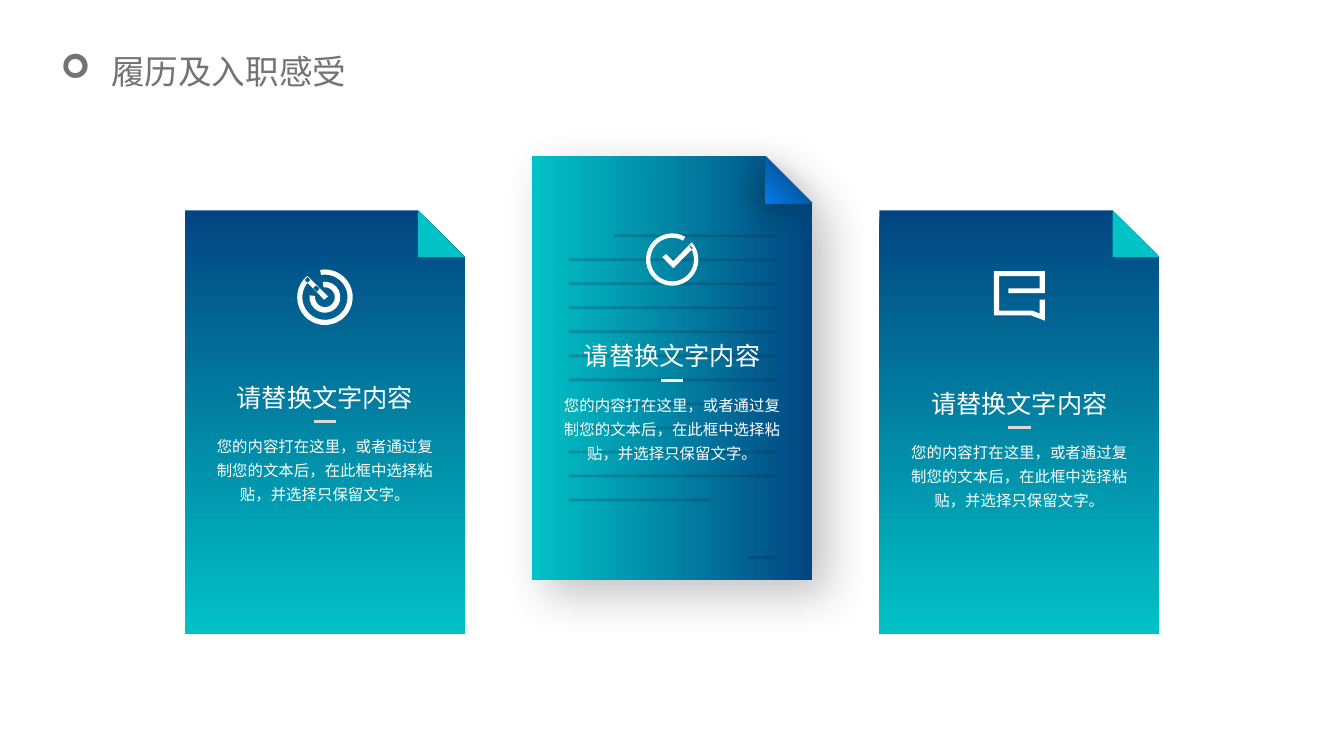
import math
from dataclasses import dataclass

import pptx
import pptx.dml.color
import pptx.enum.shapes
import pptx.enum.text
import pptx.oxml
import pptx.oxml.ns
import pptx.util
from lxml import etree

Cm = pptx.util.Cm
Pt = pptx.util.Pt
RGBColor = pptx.dml.color.RGBColor
qn = pptx.oxml.ns.qn
MSO_SHAPE = pptx.enum.shapes.MSO_SHAPE
PP_ALIGN = pptx.enum.text.PP_ALIGN
MSO_ANCHOR = pptx.enum.text.MSO_ANCHOR

NAVY = RGBColor(0x02, 0x45, 0x81)
TEAL = RGBColor(0x01, 0xC2, 0xC6)
BLUE = RGBColor(0x04, 0x7C, 0xEA)
INK = RGBColor(0x01, 0x2E, 0x56)
WHITE = RGBColor(0xFF, 0xFF, 0xFF)
PALE = RGBColor(0xD9, 0xD9, 0xD9)
GREY = RGBColor(0x75, 0x72, 0x72)

FONT = "Noto Sans CJK SC"
HEADING = "请替换文字内容"
BODY = "您的内容打在这里，或者通过复制您的文本后，在此框中选择粘贴，并选择只保留文字。"
CARD_W, CARD_H, FOLD = 7.06, 10.67, 1.18
RULE_LEFT, RULE_RIGHT = 14.33, 19.56
RULE_TOP, RULE_BOTTOM, RULE_COUNT = 5.94, 12.6, 12
ARC_PARTS = 4


@dataclass
class Contour:
    points: list[tuple[float, float]]
    curved: bool = False


def arc(radius: float, start: float, end: float) -> list[tuple[float, float]]:
    step = math.radians(end - start) / ARC_PARTS
    pull = 4 / 3 * math.tan(step / 4)
    points = [(radius * math.cos(math.radians(start)), radius * math.sin(math.radians(start)))]
    for i in range(ARC_PARTS):
        a = math.radians(start) + i * step
        b = a + step
        points += [
            (radius * (math.cos(a) - pull * math.sin(a)), radius * (math.sin(a) + pull * math.cos(a))),
            (radius * (math.cos(b) + pull * math.sin(b)), radius * (math.sin(b) - pull * math.cos(b))),
            (radius * math.cos(b), radius * math.sin(b)),
        ]
    return points


def ring(outer: float, inner: float, start: float, end: float) -> Contour:
    return Contour(arc(outer, start, end) + arc(inner, end, start), curved=True)


TARGET = [
    ring(0.7, 0.57, 260, 590),
    ring(0.39, 0.25, 262, 547),
    Contour([(0.08, -0.02), (-0.02, 0.06), (-0.51, -0.43), (-0.43, -0.53)]),
    Contour([(-0.3, -0.23), (-0.23, -0.3), (-0.13, -0.23), (-0.2, -0.13)]),
]
CHECK = [
    ring(0.66, 0.55, 319, 660),
    Contour([(-0.05, 0.14), (-0.25, -0.06), (-0.15, -0.14), (0.03, 0.04),
             (0.43, -0.37), (0.53, -0.29), (0.03, 0.22)]),
]
CHAT = [
    Contour([(0.51, 0.08), (0.64, 0.08), (0.64, 0.61), (0.3, 0.48), (-0.64, 0.48), (-0.64, -0.64),
             (0.64, -0.64), (0.64, -0.08), (-0.28, -0.08), (-0.28, -0.2), (0.51, -0.2),
             (0.51, -0.51), (-0.51, -0.51), (-0.51, 0.36), (0.33, 0.36), (0.51, 0.43)]),
]


@dataclass
class Card:
    center: float
    top: float
    heading_top: float
    icon_y: float
    icon: list[Contour]
    dash: RGBColor
    raised: bool = False


CARDS = [
    Card(8.19, 5.3, 9.32, 7.49, TARGET, PALE),
    Card(25.69, 5.3, 9.47, 7.47, CHAT, PALE),
    Card(16.94, 3.94, 8.27, 6.54, CHECK, WHITE, raised=True),
]


def add_alpha(clr, percent: int) -> None:
    etree.SubElement(clr, qn("a:alpha")).set("val", str(percent * 1000))


def fill_gradient(sp, first: RGBColor, last: RGBColor, angle: int, start: float = 0) -> None:
    sp.fill.gradient()
    sp.fill.gradient_angle = angle
    for stop, color, position in zip(sp.fill.gradient_stops, (first, last), (start, 1)):
        stop.color.rgb = color
        stop.position = position


def add_shadow(sp, alpha: int, blur: int, dist: int, angle: int) -> None:
    effects = sp._element.spPr.find(qn("a:effectLst"))
    shadow = etree.SubElement(effects, qn("a:outerShdw"), blurRad=str(Pt(blur)),
                              dist=str(Pt(dist)), dir=str(angle * 60000),
                              algn="ctr", rotWithShape="0")
    add_alpha(etree.SubElement(shadow, qn("a:srgbClr"), val="000000"), alpha)


def add_preset(shapes, kind, x: float, y: float, w: float, h: float):
    sp = shapes.add_shape(kind, Cm(x), Cm(y), Cm(w), Cm(h))
    sp.shadow.inherit = False
    sp.line.fill.background()
    return sp


def add_line(shapes, x1: float, x2: float, y: float, color: RGBColor, alpha: int = 100) -> None:
    line = shapes.add_connector(pptx.enum.shapes.MSO_CONNECTOR.STRAIGHT,
                                Cm(x1), Cm(y), Cm(x2), Cm(y))
    line.line.color.rgb = color
    line.line.width = Pt(2)
    etree.SubElement(line._element.spPr, qn("a:effectLst"))
    if alpha < 100:
        add_alpha(line._element.spPr.find(".//" + qn("a:srgbClr")), alpha)


def add_text(s, text: str, x: float, y: float, w: float, h: float, size: int,
             color: RGBColor, anchor=MSO_ANCHOR.MIDDLE):
    tf = s.shapes.add_textbox(Cm(x), Cm(y), Cm(w), Cm(h)).text_frame
    tf.word_wrap = True
    tf.auto_size = pptx.enum.text.MSO_AUTO_SIZE.SHAPE_TO_FIT_TEXT
    tf.vertical_anchor = anchor
    tf.text = text
    r = tf.paragraphs[0].runs[0]
    r.font.size = Pt(size)
    r.font.name = FONT
    r.font.color.rgb = color
    etree.SubElement(r._r.get_or_add_rPr(), qn("a:ea"), typeface=FONT)
    return tf


def add_centered(s, text: str, center: float, y: float, w: float, h: float, size: int, anchor) -> None:
    p = add_text(s, text, center - w / 2, y, w, h, size, WHITE, anchor).paragraphs[0]
    p.alignment = PP_ALIGN.CENTER
    p.line_spacing = 1.3


def add_sheet(s, card: Card) -> None:
    shapes = s.shapes.add_group_shape().shapes
    left = card.center - CARD_W / 2
    page = add_preset(shapes, MSO_SHAPE.SNIP_1_RECTANGLE, left, card.top, CARD_W, CARD_H)
    page.adjustments[0] = FOLD / CARD_W
    fill_gradient(page, NAVY, TEAL, 180 if card.raised else 270)
    fold = add_preset(shapes, MSO_SHAPE.RIGHT_TRIANGLE, left + CARD_W - FOLD, card.top, FOLD, FOLD)
    if not card.raised:
        fold.fill.solid()
        fold.fill.fore_color.rgb = TEAL
        return
    fill_gradient(fold, NAVY, BLUE, 225, 0.17)
    add_shadow(page, 23, 33, 15, 45)
    add_shadow(fold, 30, 22, 8, 135)
    gap = (RULE_BOTTOM - RULE_TOP) / (RULE_COUNT - 1)
    for i in range(RULE_COUNT):
        x1 = 15.49 if i == 0 else RULE_LEFT
        x2 = 17.88 if i == RULE_COUNT - 1 else RULE_RIGHT
        add_line(shapes, x1, x2, RULE_TOP + i * gap, INK, 25)
    add_line(shapes, 18.85, RULE_RIGHT, 14.05, INK, 25)


def bend_arcs(sp, contours: list[Contour]) -> None:
    span = 3 * ARC_PARTS
    moves = list(sp._element.iter(qn("a:moveTo")))
    for move, contour in zip(moves, contours):
        if not contour.curved:
            continue
        lines = list(move.itersiblings())[:len(contour.points) - 1]
        for i in (*range(0, span, 3), *range(span + 1, 2 * span + 1, 3)):
            curve = etree.Element(qn("a:cubicBezTo"))
            lines[i].addprevious(curve)
            for line in lines[i:i + 3]:
                curve.append(line[0])
                line.getparent().remove(line)


def add_icon(s, card: Card) -> None:
    builder = None
    for contour in card.icon:
        points = [(Cm(card.center + x), Cm(card.icon_y + y)) for x, y in contour.points]
        if builder is None:
            builder = s.shapes.build_freeform(*points[0])
        else:
            builder.move_to(*points[0])
        builder.add_line_segments(points[1:], close=True)
    sp = builder.convert_to_shape()
    bend_arcs(sp, card.icon)
    sp.shadow.inherit = False
    sp.fill.solid()
    sp.fill.fore_color.rgb = WHITE
    sp.line.fill.background()


def add_title(s) -> None:
    tf = add_text(s, "履历及入职感受", 1.53, 1.27, 7.47, 1.02, 24, GREY)
    tf.margin_left = tf.margin_right = tf.margin_top = tf.margin_bottom = 0
    pPr = tf.paragraphs[0]._p.get_or_add_pPr()
    pPr.set("marL", str(Cm(1.27)))
    pPr.set("indent", str(Cm(-1.27)))
    etree.SubElement(pPr, qn("a:buFont"), typeface="Wingdings")
    etree.SubElement(pPr, qn("a:buChar"), char="➢")


def main() -> None:
    prs = pptx.Presentation()
    prs.slide_width, prs.slide_height = Cm(33.87), Cm(19.05)
    s = prs.slides.add_slide(prs.slide_layouts[6])
    for card in CARDS:
        add_sheet(s, card)
    for card in CARDS:
        add_icon(s, card)
        add_centered(s, HEADING, card.center, card.heading_top, 5.5, 1.17, 18, MSO_ANCHOR.MIDDLE)
        add_centered(s, BODY, card.center, card.heading_top + 1.44, 6.15, 2.08, 11, MSO_ANCHOR.TOP)
        add_line(s.shapes, card.center - 0.28, card.center + 0.28, card.heading_top + 1.31, card.dash)
    add_title(s)
    prs.save("out.pptx")


if __name__ == "__main__":
    main()
